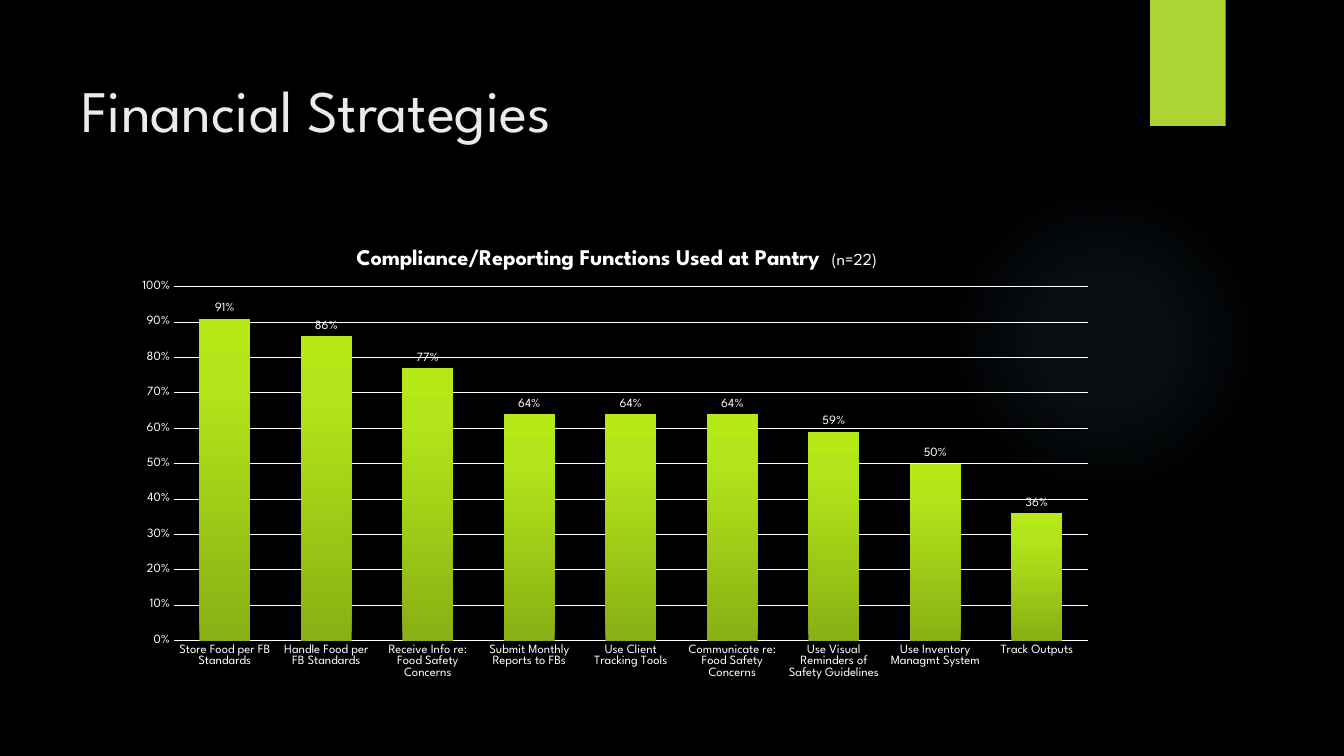
from dataclasses import dataclass

from lxml.etree import SubElement
from pptx import Presentation
from pptx.chart.chart import Chart
from pptx.chart.data import CategoryChartData
from pptx.dml.color import RGBColor
from pptx.enum.chart import XL_CHART_TYPE, XL_LABEL_POSITION, XL_TICK_MARK
from pptx.enum.shapes import MSO_SHAPE
from pptx.enum.text import MSO_ANCHOR
from pptx.oxml import parse_xml
from pptx.oxml.ns import nsdecls, qn
from pptx.oxml.xmlchemy import BaseOxmlElement
from pptx.slide import Slide
from pptx.text.text import Font
from pptx.util import Pt

FONT = "League Spartan"
COLORS = {
    "background": "000000",
    "heading": "EBEBEB",
    "text": "FFFFFF",
    "tab": "ACD433",
    "glow": "7AC4F0",
    "bar_low": "89B014",
    "bar_mid": "B2E51A",
    "bar_high": "B5EA16",
}
CIRCLE = (
    '<a:path path="circle">'
    '<a:fillToRect l="50000" t="50000" r="50000" b="50000"/></a:path>'
)
UPWARD = '<a:lin ang="16200000" scaled="0"/>'


@dataclass(frozen=True)
class Stop:
    position: int
    color: str
    opacity: int = 100


@dataclass(frozen=True)
class Decoration:
    preset: MSO_SHAPE
    left: float
    top: float
    width: float
    height: float
    color: str
    glow: tuple[Stop, ...] = ()


@dataclass(frozen=True)
class Practice:
    name: str
    share: float


DECORATIONS = [
    Decoration(
        MSO_SHAPE.OVAL, 677.5, 131.75, 221.75, 221.75, "glow",
        (Stop(0, "glow", 7), Stop(36, "glow", 6), Stop(69, "glow", 0)),
    ),
    Decoration(MSO_SHAPE.RECTANGLE, 821.5, 0, 54, 90, "tab"),
]
BAR_STOPS = (Stop(0, "bar_low"), Stop(80, "bar_mid"), Stop(100, "bar_high"))
PRACTICES = [
    Practice("Store Food per FB Standards", 0.91),
    Practice("Handle Food per FB Standards", 0.86),
    Practice("Receive Info re: Food Safety Concerns", 0.77),
    Practice("Submit Monthly Reports to FBs", 0.64),
    Practice("Use Client Tracking Tools", 0.64),
    Practice("Communicate re: Food Safety Concerns", 0.64),
    Practice("Use Visual Reminders of Safety Guidelines", 0.59),
    Practice("Use Inventory Managmt System", 0.5),
    Practice("Track Outputs", 0.36),
]


def rgb(name: str) -> RGBColor:
    return RGBColor.from_string(COLORS[name])


def style(font: Font, size: float, color: str = "text", bold: bool = False) -> None:
    font.name = FONT
    font.size = Pt(size)
    font.bold = bold
    font.color.rgb = rgb(color)


def shade(properties: BaseOxmlElement, stops: tuple[Stop, ...], direction: str) -> None:
    steps = "".join(
        f'<a:gs pos="{stop.position * 1000}"><a:srgbClr val="{COLORS[stop.color]}">'
        f'<a:alpha val="{stop.opacity * 1000}"/></a:srgbClr></a:gs>'
        for stop in stops
    )
    gradient = parse_xml(
        f'<a:gradFill {nsdecls("a")} rotWithShape="1">'
        f"<a:gsLst>{steps}</a:gsLst>{direction}</a:gradFill>"
    )
    properties.replace(properties.find(qn("a:gradFill")), gradient)


def place(parent: BaseOxmlElement, index: int, **fractions: float) -> None:
    for previous in parent.findall(qn("c:layout")):
        parent.remove(previous)
    layout = parse_xml(f'<c:layout {nsdecls("c")}><c:manualLayout/></c:layout>')
    settings: dict[str, str | float] = {"xMode": "edge", "yMode": "edge", **fractions}
    if "w" in fractions:
        settings = {"layoutTarget": "inner", **settings}
    for tag, value in settings.items():
        SubElement(layout[0], qn(f"c:{tag}")).set("val", str(value))
    parent.insert(index, layout)


def add_decoration(slide: Slide, decoration: Decoration) -> None:
    shape = slide.shapes.add_shape(
        decoration.preset, Pt(decoration.left), Pt(decoration.top),
        Pt(decoration.width), Pt(decoration.height),
    )
    shape.shadow.inherit = False
    shape.line.fill.background()
    if decoration.glow:
        shape.fill.gradient()
        shade(shape._element.spPr, decoration.glow, CIRCLE)
    else:
        shape.fill.solid()
        shape.fill.fore_color.rgb = rgb(decoration.color)


def add_heading(slide: Slide, wording: str) -> None:
    frame = slide.shapes.add_textbox(Pt(51), Pt(36), Pt(741), Pt(110)).text_frame
    frame.word_wrap = True
    frame.vertical_anchor = MSO_ANCHOR.TOP
    frame.margin_top = Pt(16.5)
    heading = frame.paragraphs[0].add_run()
    heading.text = wording
    style(heading.font, 42, "heading")


def title_chart(chart: Chart) -> None:
    chart.has_title = True
    caption = chart.chart_title.text_frame.paragraphs[0]
    for wording, size, bold in (
        ("Compliance/Reporting Functions Used at Pantry  ", 16, True),
        ("(n=22)", 12, False),
    ):
        part = caption.add_run()
        part.text = wording
        style(part.font, size, bold=bold)
    place(chart.chart_title._element, 1, x=0.235, y=0.04)


def style_axes(chart: Chart) -> None:
    for axis in (chart.category_axis, chart.value_axis):
        axis.major_tick_mark = axis.minor_tick_mark = XL_TICK_MARK.NONE
        style(axis.tick_labels.font, 9)
    practices, shares = chart.category_axis, chart.value_axis
    practices.format.line.color.rgb = rgb("text")
    practices.format.line.width = Pt(1)
    shares.format.line.fill.background()
    shares.minimum_scale, shares.maximum_scale, shares.major_unit = 0, 1, 0.1
    shares.tick_labels.number_format = "0%"
    shares.tick_labels.number_format_is_linked = False
    shares.major_gridlines.format.line.color.rgb = rgb("text")
    shares.major_gridlines.format.line.width = Pt(0.75)


def add_practice_chart(slide: Slide) -> None:
    data = CategoryChartData(number_format="0%")
    data.categories = [practice.name for practice in PRACTICES]
    data.add_series("Series 1", [practice.share for practice in PRACTICES])
    chart = slide.shapes.add_chart(
        XL_CHART_TYPE.COLUMN_CLUSTERED, Pt(87), Pt(161.25), Pt(704), Pt(330.5), data
    ).chart
    style(chart.font, 10)
    chart.has_legend = False
    title_chart(chart)
    style_axes(chart)
    place(chart._chartSpace.chart.plotArea, 0, x=0.053, y=0.132, w=0.927, h=0.765)

    columns = chart.plots[0]
    columns.vary_by_categories = False
    columns.gap_width = 100
    columns.overlap = -24
    shares = columns.series[0]
    shares.format.fill.gradient()
    shade(shares._element.find(qn("c:spPr")), BAR_STOPS, UPWARD)
    labels = shares.data_labels
    labels.show_value = True
    labels.position = XL_LABEL_POSITION.OUTSIDE_END
    labels.number_format = "0%"
    labels.number_format_is_linked = False
    style(labels.font, 9)


def main() -> None:
    deck = Presentation()
    deck.slide_width, deck.slide_height = Pt(960), Pt(540)
    slide = deck.slides.add_slide(deck.slide_layouts[6])
    slide.background.fill.solid()
    slide.background.fill.fore_color.rgb = rgb("background")
    for decoration in DECORATIONS:
        add_decoration(slide, decoration)
    add_heading(slide, "Financial Strategies")
    add_practice_chart(slide)
    deck.save("out.pptx")


if __name__ == "__main__":
    main()
